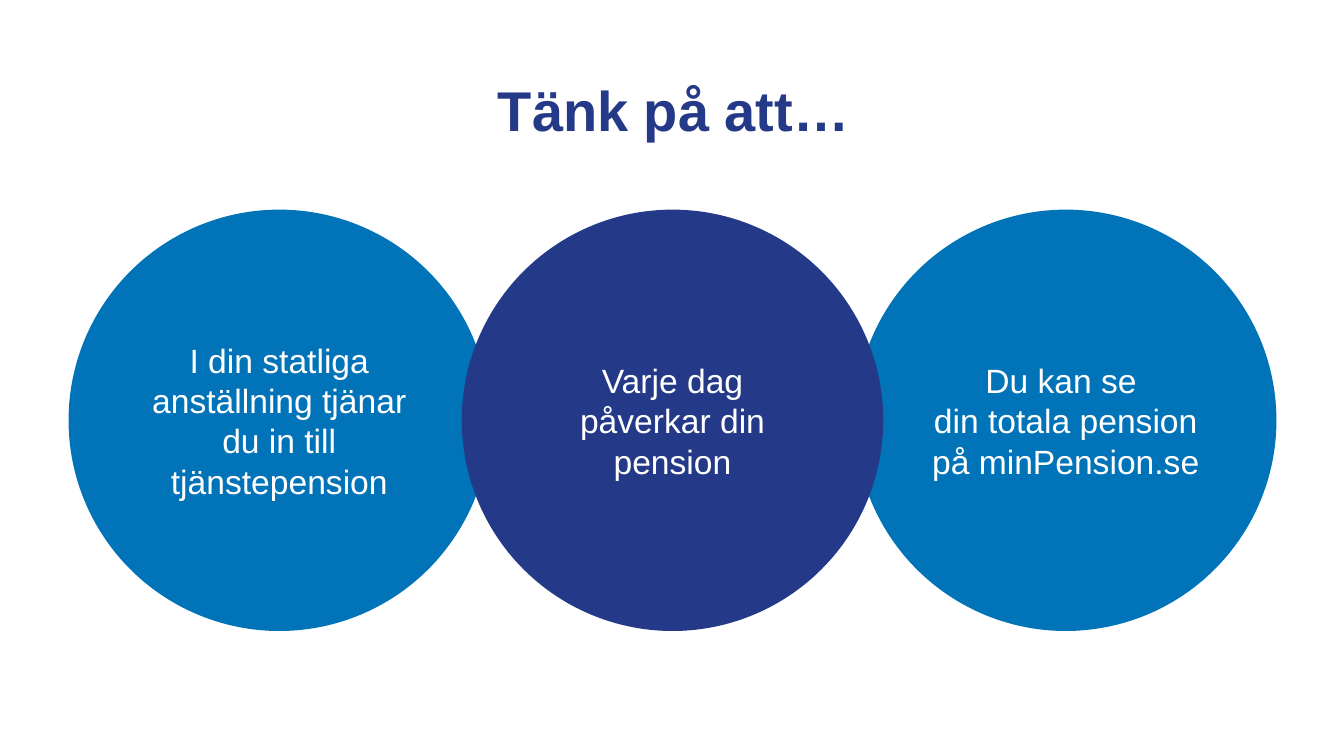
from dataclasses import dataclass

from pptx import Presentation
from pptx.dml.color import RGBColor
from pptx.enum.shapes import MSO_SHAPE
from pptx.enum.text import MSO_ANCHOR, PP_ALIGN
from pptx.slide import Slide
from pptx.text.text import TextFrame
from pptx.util import Inches, Pt

ELLIPSE = MSO_SHAPE.OVAL
MIDDLE = MSO_ANCHOR.MIDDLE
CENTER = PP_ALIGN.CENTER


@dataclass(frozen=True)
class Theme:
    font: str = "Arial"
    title_size: int = 40
    body_size: int = 24
    navy: str = "243987"
    blue: str = "0173B8"
    white: str = "FFFFFF"


@dataclass(frozen=True)
class Grid:
    """Circle columns in inches; the pitch is less than the diameter, so circles overlap."""
    left: float = 0.68
    top: float = 2.08
    pitch: float = 3.9
    diameter: float = 4.18

    def column_left(self, column: int) -> float:
        return self.left + column * self.pitch


@dataclass(frozen=True)
class Circle:
    column: int
    text: str
    fill: str


THEME = Theme()
GRID = Grid()

# Back to front: the middle circle lies on top of its neighbours.
CIRCLES = [
    Circle(2, "Du kan se \vdin totala pension på minPension.se", THEME.blue),
    Circle(0, "I din statliga anställning tjänar du in till tjänstepension", THEME.blue),
    Circle(1, "Varje dag påverkar din pension", THEME.navy),
]


def set_text(tf: TextFrame, text: str, size: int, color: str, bold: bool = False) -> None:
    tf.word_wrap = True
    tf.vertical_anchor = MIDDLE
    p = tf.paragraphs[0]
    p.text = text
    p.alignment = CENTER
    p.font.name = THEME.font
    p.font.size = Pt(size)
    p.font.bold = bold
    p.font.color.rgb = RGBColor.from_string(color)


def add_title(s: Slide, text: str) -> None:
    tf = s.shapes.add_textbox(Inches(0.69), Inches(0.4), Inches(11.98), Inches(1.46)).text_frame
    tf.margin_left = tf.margin_right = tf.margin_top = tf.margin_bottom = 0
    set_text(tf, text, THEME.title_size, THEME.navy, bold=True)
    tf.paragraphs[0].line_spacing = 0.9


def add_circle(s: Slide, circle: Circle) -> None:
    size = Inches(GRID.diameter)
    sp = s.shapes.add_shape(
        ELLIPSE, Inches(GRID.column_left(circle.column)), Inches(GRID.top), size, size
    )
    sp.shadow.inherit = False
    sp.fill.solid()
    sp.fill.fore_color.rgb = RGBColor.from_string(circle.fill)
    sp.line.fill.background()
    set_text(sp.text_frame, circle.text, THEME.body_size, THEME.white)


def main() -> None:
    prs = Presentation()
    prs.slide_width, prs.slide_height = Inches(13.33), Inches(7.5)
    s = prs.slides.add_slide(prs.slide_layouts[6])
    add_title(s, "Tänk på att…")
    for circle in CIRCLES:
        add_circle(s, circle)
    prs.save("out.pptx")


if __name__ == "__main__":
    main()
